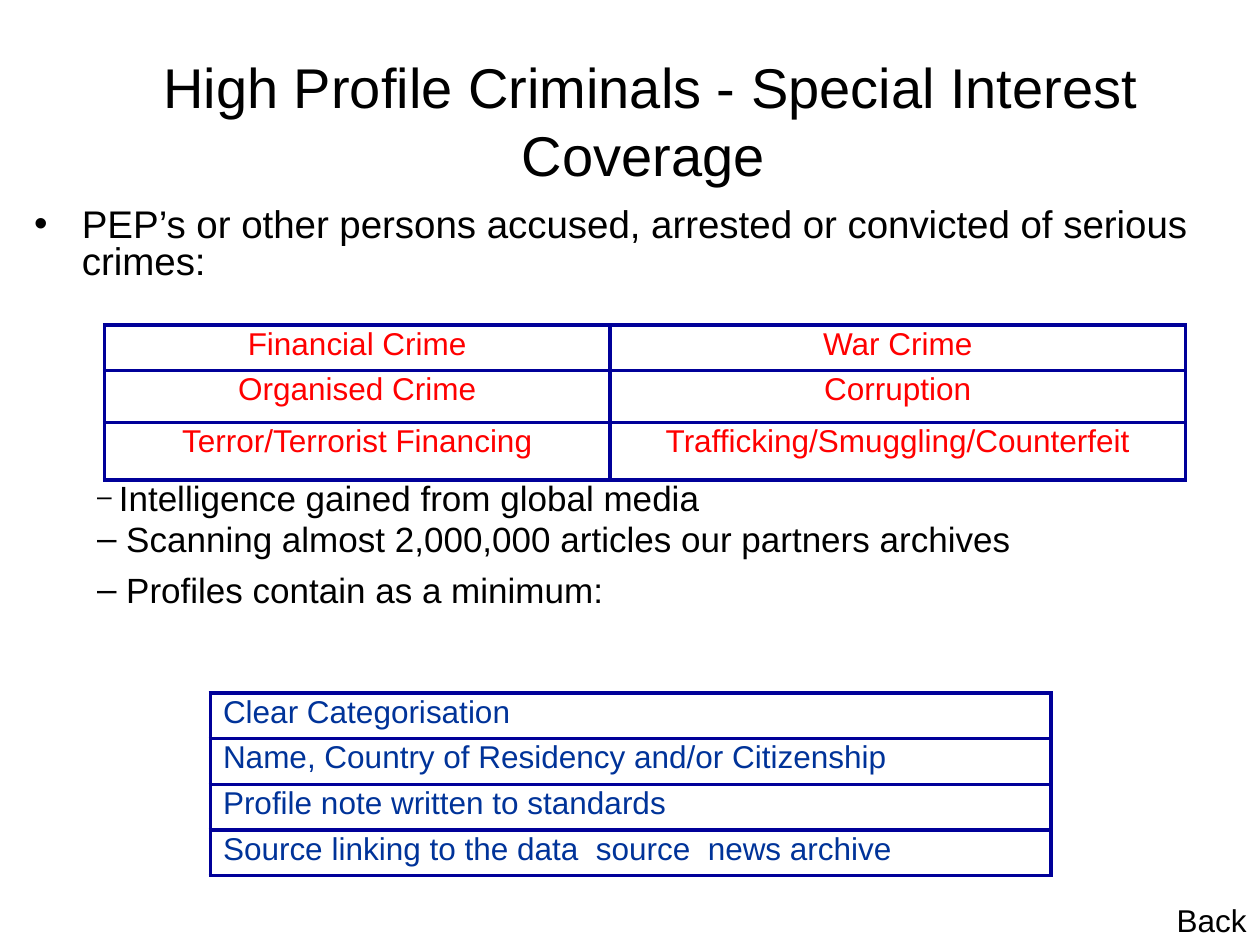
from dataclasses import dataclass
from lxml.etree import SubElement
from pptx import Presentation
from pptx.dml.color import RGBColor
from pptx.enum.text import MSO_ANCHOR, MSO_AUTO_SIZE, PP_ALIGN
from pptx.oxml.ns import qn
from pptx.util import Inches, Pt

WIDTH, HEIGHT = Inches(10), Inches(7.5)


@dataclass(frozen=True)
class Theme:
    font: str = "Arial"
    ink: str = "000000"
    crime: str = "FF0000"
    note: str = "003399"
    rule: str = "000099"
    title: int = 32
    lead: int = 22
    item: int = 20
    small: int = 15
    cell: int = 18
    line: float = 2.25


THEME = Theme()


def span(left, top, width, height):
    return (int(WIDTH * left / 100), int(HEIGHT * top / 100),
            int(WIDTH * width / 100), int(HEIGHT * height / 100))


def place(shape, box):
    shape.left, shape.top, shape.width, shape.height = box


def add_run(para, text, size, color=THEME.ink):
    run = para.add_run()
    run.text = text
    font = run.font
    font.name, font.size = THEME.font, Pt(size)
    font.color.rgb = RGBColor.from_string(color)


def add_title(slide, text):
    shape = slide.shapes.title
    place(shape, span(2.5, 8.9, 97.1, 7.6))
    frame = shape.text_frame
    frame.word_wrap = True
    frame.auto_size = MSO_AUTO_SIZE.NONE
    frame.vertical_anchor = MSO_ANCHOR.MIDDLE
    para = frame.paragraphs[0]
    para.alignment = PP_ALIGN.CENTER
    add_run(para, text, THEME.title)


def add_point(para, runs, level, left, hang, before, pitch):
    para.level = level
    para.space_before = Pt(before)
    para.line_spacing = pitch
    props = para._p.get_or_add_pPr()
    props.set("marL", str(Inches(left)))
    props.set("indent", str(Inches(hang)))
    for text, size in runs:
        add_run(para, text, size)


def add_body(slide, points):
    shape = slide.placeholders[1]
    place(shape, span(1.7, 14, 98.3, 82.67))
    frame = shape.text_frame
    frame.word_wrap = True
    frame.auto_size = MSO_AUTO_SIZE.NONE
    frame.vertical_anchor = MSO_ANCHOR.TOP
    frame.margin_top = Inches(0.61)
    for spot, point in enumerate(points):
        para = frame.add_paragraph() if spot else frame.paragraphs[0]
        add_point(para, *point)


def add_edges(cell):
    props = cell._tc.get_or_add_tcPr()
    for spot, side in enumerate(("lnL", "lnR", "lnT", "lnB")):
        edge = props.makeelement(qn(f"a:{side}"), {"w": str(Pt(THEME.line))})
        fill = SubElement(edge, qn("a:solidFill"))
        SubElement(fill, qn("a:srgbClr"), val=THEME.rule)
        props.insert(spot, edge)


def add_grid(slide, box, cols, rows, texts, color, align):
    table = slide.shapes.add_table(len(rows), len(cols), *box).table
    table.first_row = table.horz_banding = False
    for col, share in zip(table.columns, cols):
        col.width = int(WIDTH * share / 100)
    for row, share, line in zip(table.rows, rows, texts):
        row.height = int(HEIGHT * share / 100)
        for cell, text in zip(row.cells, line):
            cell.fill.background()
            add_edges(cell)
            para = cell.text_frame.paragraphs[0]
            para.alignment = align
            para.line_spacing = 0.85
            add_run(para, text, THEME.cell, color)


def add_label(slide, box, text):
    frame = slide.shapes.add_textbox(*box).text_frame
    frame.word_wrap = False
    frame.auto_size = MSO_AUTO_SIZE.SHAPE_TO_FIT_TEXT
    add_run(frame.paragraphs[0], text, THEME.cell)


def main():
    deck = Presentation()
    deck.slide_width, deck.slide_height = WIDTH, HEIGHT
    slide = deck.slides.add_slide(deck.slide_layouts[1])
    add_title(slide, " High Profile Criminals - Special Interest Coverage")
    lead = "PEP’s or other persons accused, arrested or convicted of serious crimes:"
    media = [(" ", THEME.small), ("Intelligence gained from global media", THEME.item)]
    scan = " Scanning almost 2,000,000 articles our partners archives"
    least = " Profiles contain as a minimum:"
    add_body(slide, [
        ([(lead, THEME.lead)], 0, 0.38, -0.38, 0, 0.8),
        (media, 1, 0.5, 0, 115, 0.8),
        ([(scan, THEME.item)], 1, 0.5, 0, 4.4, 0.8),
        ([(least, THEME.item)], 1, 0.5, 0, 4, 1.05),
    ])
    crimes = [
        ("Financial Crime", "War Crime"),
        ("Organised Crime", "Corruption"),
        ("Terror/Terrorist Financing", "Trafficking/Smuggling/Counterfeit"),
    ]
    add_grid(slide, span(8.3, 34.4, 85.8, 16.4), (40.1, 45.7), (4.8, 5.5, 6.1),
             crimes, THEME.crime, PP_ALIGN.CENTER)
    needs = [
        ("Clear Categorisation",),
        ("Name, Country of Residency and/or Citizenship",),
        ("Profile note written to standards",),
        ("Source linking to the data  source  news archive",),
    ]
    add_grid(slide, span(16.7, 73.33, 66.7, 19.33), (66.7,), (4.83,) * 4,
             needs, THEME.note, PP_ALIGN.LEFT)
    add_label(slide, span(92.4, 94.67, 7.6, 5.33), "Back")
    deck.save("out.pptx")


if __name__ == "__main__":
    main()
